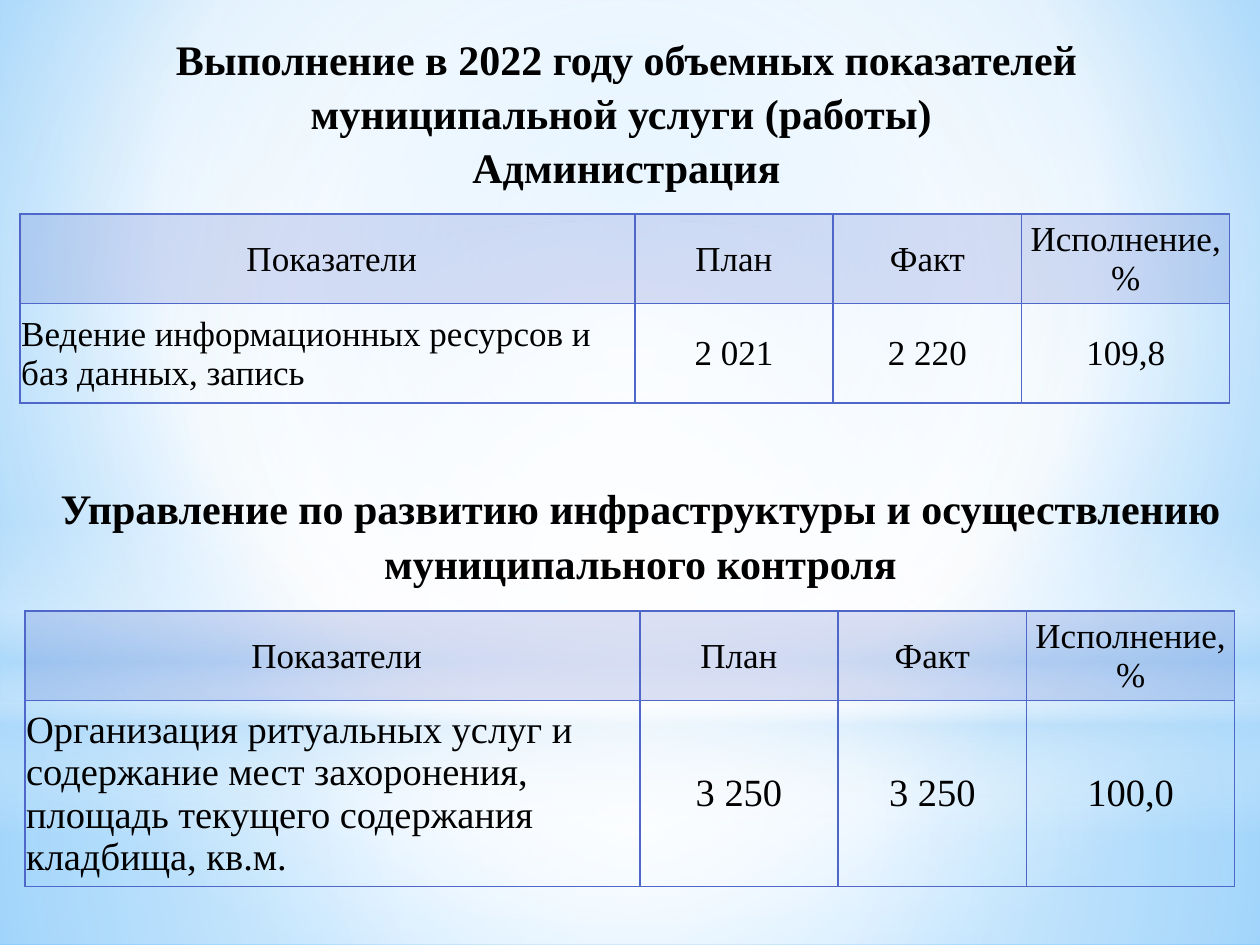
from dataclasses import dataclass

from lxml import etree
from pptx import Presentation
from pptx import util as u
from pptx.dml.color import RGBColor
from pptx.enum import shapes, text
from pptx.oxml.ns import qn


@dataclass(frozen=True)
class Theme:
    font: str = "Times New Roman"
    ink: str = "000000"
    accent: str = "4E67C8"
    white: str = "FFFFFF"
    mist: str = "B4DCFA"
    sky: str = "9ED5FF"
    azure: str = "5BB9FF"
    heading: int = 24
    body: int = 20
    large: int = 22


def add(parent, tag, **attributes):
    element = etree.SubElement(parent, qn(tag))
    for name, value in attributes.items():
        element.set(name, str(value))
    return element


def add_color(parent, color, alpha=100):
    node = add(parent, "a:srgbClr", val=color)
    if alpha < 100:
        add(node, "a:alpha", val=alpha * 1000)


def gradient(stops, center=None):
    """Stops are (position, colour, opacity); without a center it runs downwards."""
    fill = etree.Element(qn("a:gradFill"), rotWithShape="1")
    stop_list = add(fill, "a:gsLst")
    for position, color, alpha in stops:
        add_color(add(stop_list, "a:gs", pos=position * 1000), color, alpha)
    if center:
        edges = {side: value * 1000 for side, value in zip("ltrb", center)}
        add(add(fill, "a:path", path="circle"), "a:fillToRect", **edges)
    else:
        add(fill, "a:lin", ang=90 * 60000, scaled=0)
    return fill


class SlideBuilder:
    def __init__(self, page, theme):
        self.page = page
        self.theme = theme

    def background(self, stops, center):
        self.page.background.fill.solid()
        properties = self.page.element.find(".//" + qn("p:bgPr"))
        properties.replace(properties[0], gradient(stops, center))

    def glow(self, kind, top, height, stops, center=None):
        shape = self.page.shapes.add_shape(kind, 0, u.Pt(top), u.Pt(720), u.Pt(height))
        shape.shadow.inherit = False
        shape.line.fill.background()
        shape.fill.solid()
        properties = shape.element.spPr
        solid = properties.find(qn("a:solidFill"))
        properties.replace(solid, gradient(stops, center))

    def span(self, para, words, size, bold=False):
        span = para.add_run()
        span.text = words
        span.font.name = self.theme.font
        span.font.size = u.Pt(size)
        span.font.bold = bold
        span.font.color.rgb = RGBColor.from_string(self.theme.ink)

    def heading(self, left, top, lines, anchor):
        box = self.page.shapes.add_textbox(u.Pt(left), u.Pt(top), u.Pt(692), u.Pt(96.5))
        frame = box.text_frame
        frame.word_wrap = True
        frame.vertical_anchor = anchor
        para = frame.paragraphs[0]
        para.alignment = text.PP_ALIGN.CENTER
        para.line_spacing = 1.08
        for index, line in enumerate(lines):
            if index:
                para.add_line_break()
            self.span(para, line, self.theme.heading, bold=True)

    def cell(self, cell, words, size, centered, shaded):
        cell.vertical_anchor = text.MSO_ANCHOR.MIDDLE
        cell.margin_left = cell.margin_right = cell.margin_top = u.Pt(0.75)
        cell.margin_bottom = 0
        para = cell.text_frame.paragraphs[0]
        para.alignment = text.PP_ALIGN.CENTER if centered else text.PP_ALIGN.LEFT
        self.span(para, words, size)
        # Borders come first in the cell properties, the fill after them
        properties = cell._tc.get_or_add_tcPr()
        for side in "LRTB":
            line = add(properties, f"a:ln{side}", w=u.Pt(1))
            add_color(add(line, "a:solidFill"), self.theme.accent)
        if shaded:
            add_color(add(properties, "a:solidFill"), self.theme.accent, 20)
        else:
            add(properties, "a:noFill")

    def table(self, left, top, heights, rows, size):
        widths = (351.4, 113.3, 107.8, 118.9)
        table = self.page.shapes.add_table(
            len(rows), len(widths), u.Pt(left), u.Pt(top),
            u.Pt(sum(widths)), u.Pt(sum(heights))).table
        table.first_row = table.horz_banding = False
        for column, width in zip(table.columns, widths):
            column.width = u.Pt(width)
        for r, (row, height) in enumerate(zip(rows, heights)):
            table.rows[r].height = u.Pt(height)
            for c, words in enumerate(row):
                header = r == 0
                self.cell(table.cell(r, c), words,
                          self.theme.body if header else size,
                          centered=header or c > 0, shaded=header)


def main():
    theme = Theme()
    deck = Presentation()
    deck.slide_width, deck.slide_height = u.Pt(720), u.Pt(540)
    slide = SlideBuilder(deck.slides.add_slide(deck.slide_layouts[6]), theme)
    white, mist = theme.white, theme.mist
    middle = (50, 50, 50, 50)
    rectangle = shapes.MSO_SHAPE.RECTANGLE

    # Sky backdrop with soft glows
    slide.background([(0, theme.sky, 100), (60, white, 100), (100, theme.azure, 100)],
                     (20, 10, 20, 60))
    slide.glow(rectangle, 402, 138, [(0, white, 91), (37, white, 76), (100, mist, 79)], middle)
    slide.glow(rectangle, 0, 402, [(0, white, 89), (48, white, 62), (100, mist, 79)], middle)
    slide.glow(rectangle, 297, 180, [(0, white, 0), (29, white, 30), (45, mist, 40),
                                     (55, white, 26), (65, mist, 60), (100, white, 0)])
    slide.glow(shapes.MSO_SHAPE.OVAL, 126, 402, [(0, white, 100), (56, white, 0)], middle)

    header = (" Показатели", "План", "Факт", "Исполнение, %")

    # Administration
    slide.heading(12, 15, ["Выполнение в 2022 году объемных показателей "
                           "муниципальной услуги (работы) ", "Администрация"],
                  text.MSO_ANCHOR.MIDDLE)
    slide.table(11.4, 122.4, (51, 57), [
        header,
        ("Ведение информационных ресурсов и баз данных, запись", "2 021", "2 220", "109,8"),
    ], theme.body)

    # Infrastructure and municipal control
    slide.table(14.2, 349.2, (51, 45), [
        header,
        ("Организация ритуальных услуг и содержание мест захоронения, "
         "площадь текущего содержания кладбища, кв.м.", "3 250", "3 250", "100,0"),
    ], theme.large)
    slide.heading(20, 270, ["Управление по развитию инфраструктуры и осуществлению "
                            "муниципального контроля"], text.MSO_ANCHOR.TOP)

    deck.save("out.pptx")


if __name__ == "__main__":
    main()
